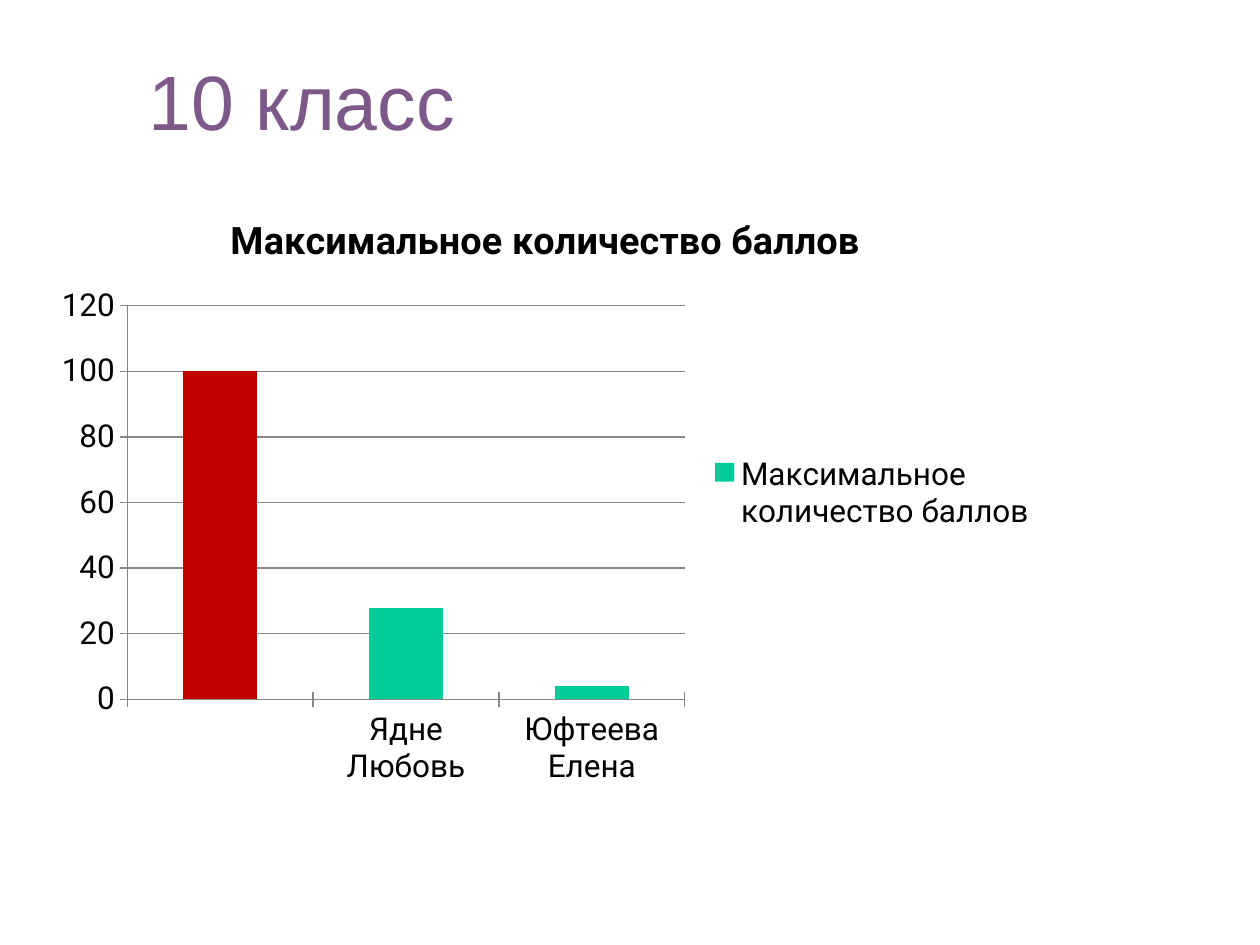
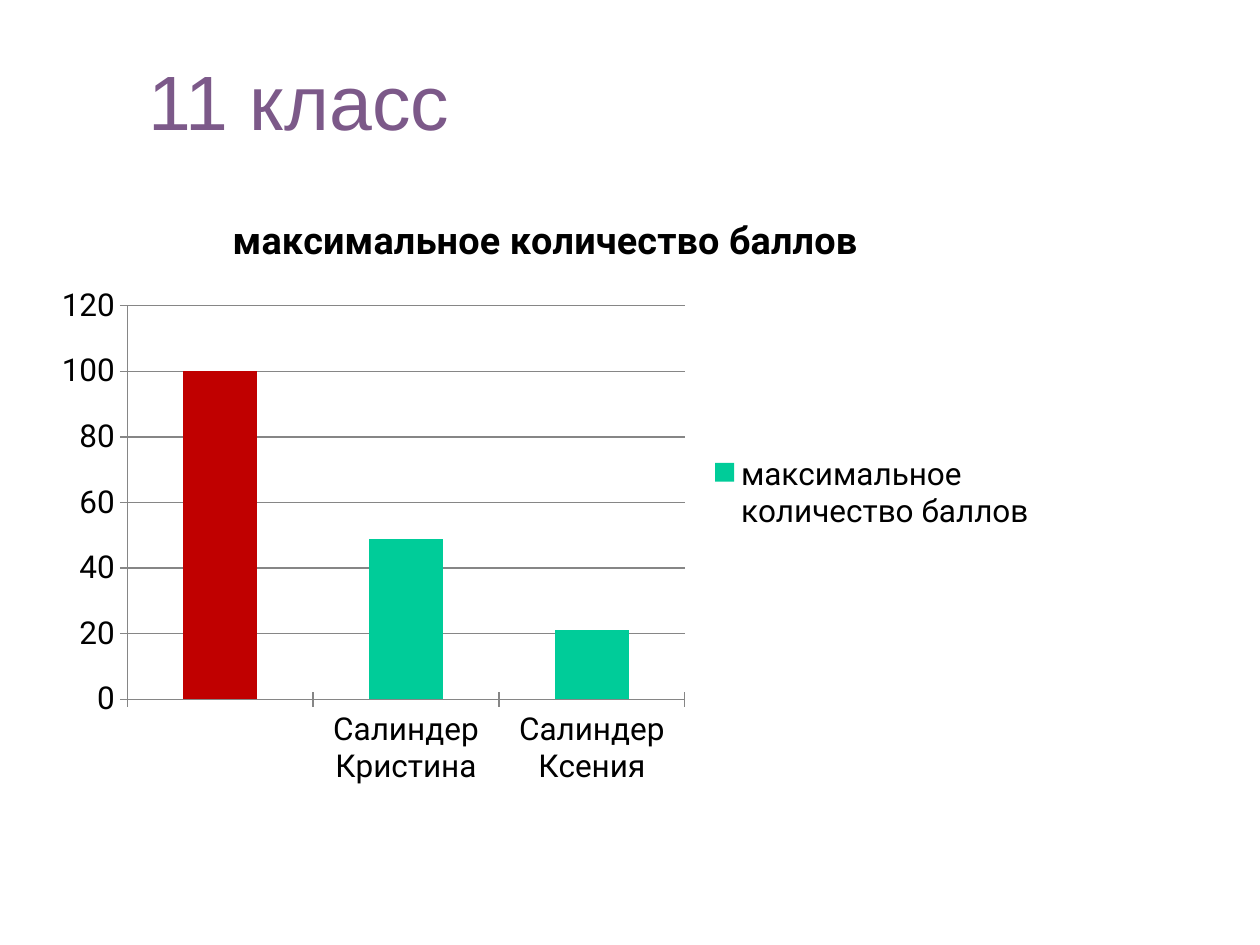
from pptx import Presentation
from pptx.chart.data import CategoryChartData
from pptx.dml.color import RGBColor
from pptx.enum.chart import XL_CHART_TYPE, XL_LEGEND_POSITION, XL_TICK_MARK
from pptx.enum.text import MSO_ANCHOR, PP_ALIGN
from pptx.util import Inches, Pt

CLUSTERED = XL_CHART_TYPE.COLUMN_CLUSTERED
STACKED = XL_CHART_TYPE.COLUMN_STACKED
LEGEND_RIGHT = XL_LEGEND_POSITION.RIGHT
TICK_CROSS = XL_TICK_MARK.CROSS
MIDDLE = MSO_ANCHOR.MIDDLE
LEFT = PP_ALIGN.LEFT

PURPLE = RGBColor(0x7C, 0x59, 0x89)
GREEN = RGBColor(0x00, 0xCC, 0x99)
RED = RGBColor(0xC0, 0x00, 0x00)
BLACK = RGBColor(0x00, 0x00, 0x00)
GRAY = RGBColor(0x86, 0x86, 0x86)
WHITE = RGBColor(0xFF, 0xFF, 0xFF)

TITLE_ONLY = 5
TITLE_AREA = (1.08, 0.33, 8.75, 0.92)
CHART_AREA = (0.33, 1.5, 8, 4.83)
TITLE_FONT = {"name": "Arial", "size": Pt(44), "bold": False, "color": PURPLE}
CHART_FONT = {"name": "Roboto", "size": Pt(18), "bold": False, "color": BLACK}
HEADING_FONT = {**CHART_FONT, "size": Pt(21.6), "bold": True}


class ScoreDeck:
    def __init__(self):
        self.deck = Presentation()
        self.deck.slide_width = Inches(10)
        self.deck.slide_height = Inches(7.5)
        self.page = None

    def format_font(self, font, style):
        for key, value in style.items():
            if key == "color":
                font.color.rgb = value
            else:
                setattr(font, key, value)

    def add_page(self, title):
        self.page = self.deck.slides.add_slide(self.deck.slide_layouts[TITLE_ONLY])
        self.page.background.fill.solid()
        self.page.background.fill.fore_color.rgb = WHITE
        box = self.page.shapes.title
        box.left, box.top, box.width, box.height = map(Inches, TITLE_AREA)
        box.text_frame.vertical_anchor = MIDDLE
        para = box.text_frame.paragraphs[0]
        para.alignment = LEFT
        span = para.add_run()
        span.text = title
        self.format_font(span.font, TITLE_FONT)

    def add_score_chart(self, kind, name, scores):
        data = CategoryChartData()
        data.categories = list(scores)
        data.add_series(name, list(scores.values()))
        frame = self.page.shapes.add_chart(kind, *map(Inches, CHART_AREA), data)
        chart = frame.chart
        self.format_font(chart.font, CHART_FONT)
        self.add_heading(chart, name)
        chart.has_legend = True
        chart.legend.position = LEGEND_RIGHT
        chart.legend.include_in_layout = False
        for axis in (chart.category_axis, chart.value_axis):
            axis.major_tick_mark = TICK_CROSS
            self.format_line(axis.format.line)
        chart.value_axis.has_major_gridlines = True
        self.format_line(chart.value_axis.major_gridlines.format.line)
        plot = chart.plots[0]
        plot.gap_width = 150
        plot.vary_by_categories = False
        if kind == STACKED:
            plot.overlap = 100
        series = plot.series[0]
        for bar, color in ((series, GREEN), (series.points[0], RED)):
            bar.format.fill.solid()
            bar.format.fill.fore_color.rgb = color

    def add_heading(self, chart, text):
        chart.has_title = True
        chart.chart_title.include_in_layout = False
        span = chart.chart_title.text_frame.paragraphs[0].add_run()
        span.text = text
        self.format_font(span.font, HEADING_FONT)

    def format_line(self, line):
        line.color.rgb = GRAY
        line.width = Pt(0.75)


def main():
    show = ScoreDeck()
    show.add_page("10 класс")
    show.add_score_chart(
        CLUSTERED,
        "Максимальное количество баллов",
        {"": 100, "Ядне Любовь": 28, "Юфтеева Елена": 4},
    )
    show.add_page("11 класс")
    show.add_score_chart(
        STACKED,
        "максимальное количество баллов",
        {"": 100, "Салиндер Кристина": 49, "Салиндер Ксения": 21},
    )
    show.deck.save("out.pptx")


if __name__ == "__main__":
    main()
